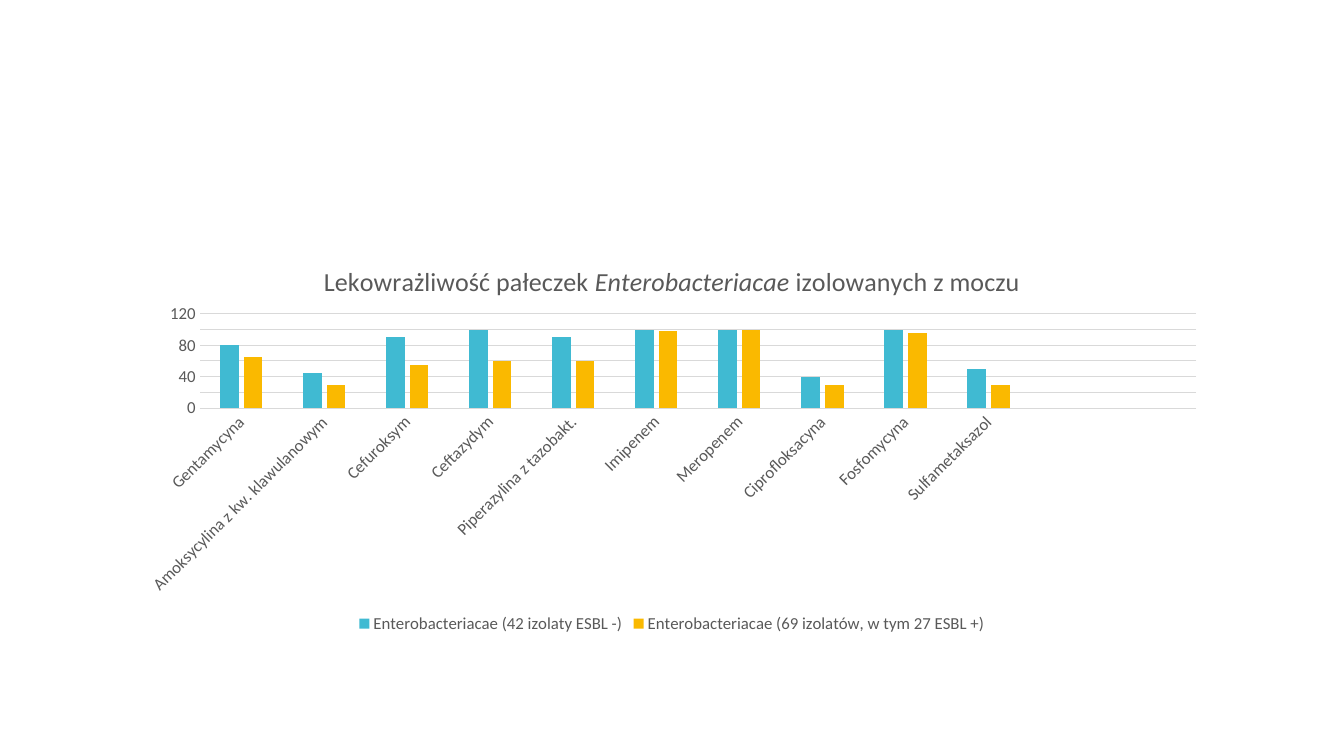
from dataclasses import dataclass

from pptx import Presentation
from pptx.chart.data import CategoryChartData
from pptx.dml.color import RGBColor
from pptx.enum.chart import (
    XL_CHART_TYPE as ChartType,
    XL_LEGEND_POSITION as LegendPosition,
    XL_TICK_MARK as TickMark,
)
from pptx.util import Pt


@dataclass(frozen=True)
class Theme:
    font: str = "Calibri"
    text: str = "595959"
    rule: str = "D9D9D9"
    series: tuple = ("40BAD2", "FAB900")
    title_size: float = 18.6
    label_size: float = 12
    rule_width: float = 0.75


TITLE = (("Lekowrażliwość pałeczek ", False),
         ("Enterobacteriacae", True),
         (" izolowanych z moczu", False))

# Each antibiotic with its susceptibility in the two groups of isolates.
SUSCEPTIBILITY = (
    ("Gentamycyna", 80, 65),
    ("Amoksycylina z kw. klawulanowym", 45, 30),
    ("Cefuroksym", 90, 55),
    ("Ceftazydym", 100, 60),
    ("Piperazylina z tazobakt.", 90, 60),
    ("Imipenem", 100, 98),
    ("Meropenem", 100, 100),
    ("Ciprofloksacyna", 40, 30),
    ("Fosfomycyna", 100, 95),
    ("Sulfametaksazol", 50, 30),
    ("", None, None),
    ("", None, None),
)
GROUPS = ("Enterobacteriacae (42 izolaty ESBL -)",
          "Enterobacteriacae (69 izolatów, w tym 27 ESBL +)")


class ChartPage:
    def __init__(self, deck, theme):
        self.theme = theme
        self.page = deck.slides.add_slide(deck.slide_layouts[6])

    def style_font(self, font, size, italic=False):
        font.name = self.theme.font
        font.size = Pt(size)
        font.bold = False
        font.italic = italic
        font.color.rgb = RGBColor.from_string(self.theme.text)

    def style_rule(self, line):
        line.width = Pt(self.theme.rule_width)
        line.color.rgb = RGBColor.from_string(self.theme.rule)

    def add_columns(self, groups, rows, left, top, width, height):
        names, *columns = zip(*rows)
        data = CategoryChartData()
        data.categories = names
        for group, values in zip(groups, columns):
            data.add_series(group, values)
        chart = self.page.shapes.add_chart(
            ChartType.COLUMN_CLUSTERED,
            Pt(left), Pt(top), Pt(width), Pt(height), data).chart
        self.style_font(chart.font, self.theme.label_size)

        plot = chart.plots[0]
        plot.gap_width, plot.overlap = 219, -27
        plot.vary_by_categories = False
        for series, color in zip(plot.series, self.theme.series):
            series.format.fill.solid()
            series.format.fill.fore_color.rgb = RGBColor.from_string(color)
            series.invert_if_negative = False
        return chart

    def add_title(self, chart, spans):
        chart.has_title = True
        chart.chart_title.include_in_layout = False
        para = chart.chart_title.text_frame.paragraphs[0]
        for text, italic in spans:
            span = para.add_run()
            span.text = text
            self.style_font(span.font, self.theme.title_size, italic=italic)

    def add_legend(self, chart):
        chart.has_legend = True
        chart.legend.position = LegendPosition.BOTTOM
        chart.legend.include_in_layout = False
        self.style_font(chart.legend.font, self.theme.label_size)

    def style_axes(self, chart, maximum, step):
        names, scale = chart.category_axis, chart.value_axis
        for axis in (names, scale):
            axis.major_tick_mark = axis.minor_tick_mark = TickMark.NONE
            self.style_font(axis.tick_labels.font, self.theme.label_size)
        self.style_rule(names.format.line)
        label_body = names._element.xpath("c:txPr/a:bodyPr")[0]
        label_body.set("rot", str(-45 * 60000))

        scale.minimum_scale, scale.maximum_scale = 0, maximum
        scale.major_unit = step
        scale.format.line.fill.background()
        scale.has_major_gridlines = True
        self.style_rule(scale.major_gridlines.format.line)


def main():
    deck = Presentation()
    deck.slide_width, deck.slide_height = Pt(960), Pt(540)
    page = ChartPage(deck, Theme())
    chart = page.add_columns(GROUPS, SUSCEPTIBILITY,
                             left=90, top=177, width=780, height=278.5)
    page.add_title(chart, TITLE)
    page.add_legend(chart)
    page.style_axes(chart, maximum=120, step=20)
    deck.save("out.pptx")


if __name__ == "__main__":
    main()
